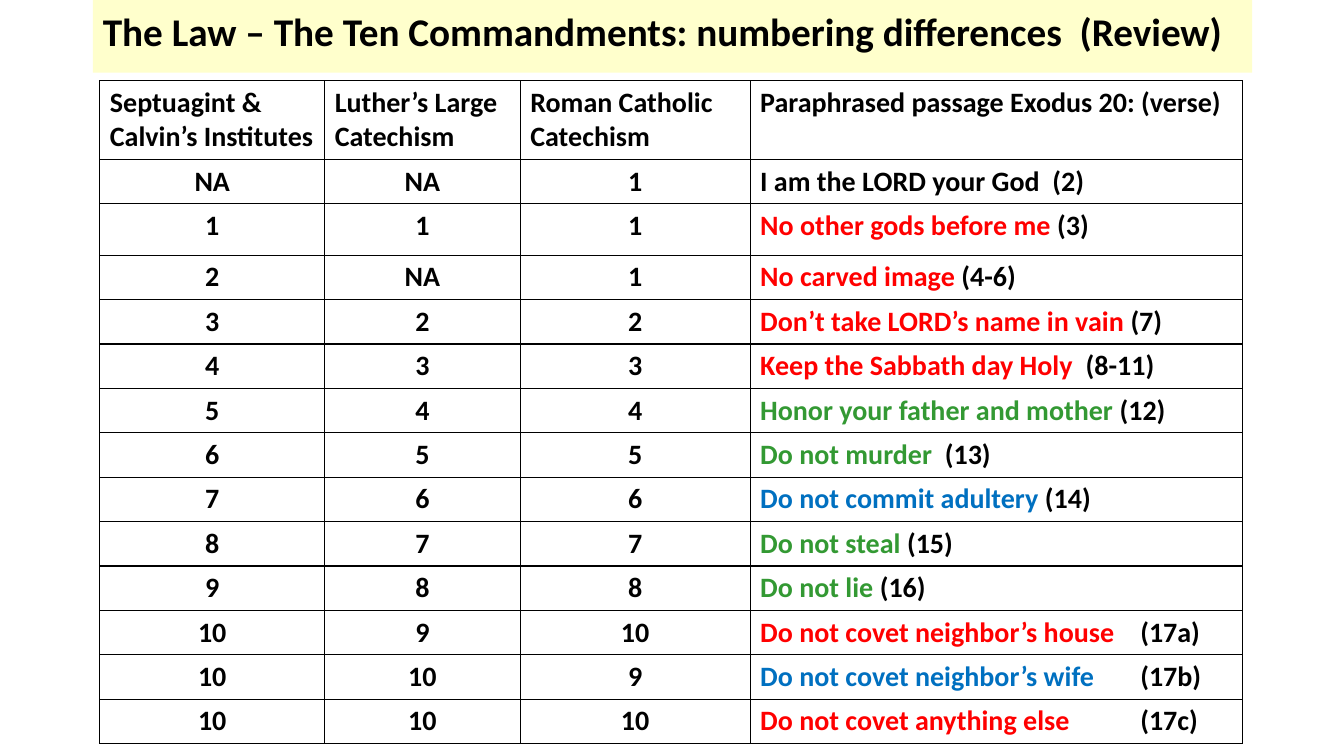
from dataclasses import dataclass

from lxml import etree
from pptx import Presentation
from pptx.dml.color import RGBColor
from pptx.enum.text import MSO_ANCHOR, PP_ALIGN
from pptx.oxml.ns import qn
from pptx.util import Inches, Pt

LEFT, CENTER = PP_ALIGN.LEFT, PP_ALIGN.CENTER
MIDDLE = MSO_ANCHOR.MIDDLE
TITLE_ONLY = 5


@dataclass(frozen=True)
class Theme:
    font: str = "Calibri"
    title_size: int = 28
    table_size: int = 20
    black: str = "000000"
    red: str = "FF0000"
    green: str = "339933"
    blue: str = "0070C0"
    title_fill: str = "FFFFCC"
    border_pt: int = 1


@dataclass(frozen=True)
class Commandment:
    numbers: tuple[str, str, str]
    passage: str
    verse: str
    color: str


THEME = Theme()
TITLE = "The Law – The Ten Commandments: numbering differences  (Review)"
HEADERS = (
    "Septuagint & Calvin’s Institutes",
    "Luther’s Large Catechism",
    "Roman Catholic Catechism",
    "Paraphrased passage Exodus 20: (verse)",
)
COMMANDMENTS = (
    Commandment(("NA", "NA", "1"), "I am the LORD your God  ", "(2)", THEME.black),
    Commandment(("1", "1", "1"), "No other gods before me ", "(3)", THEME.red),
    Commandment(("2", "NA", "1"), "No carved image ", "(4-6)", THEME.red),
    Commandment(("3", "2", "2"), "Don’t take LORD’s name in vain ", "(7)", THEME.red),
    Commandment(("4", "3", "3"), "Keep the Sabbath day Holy  ", "(8-11)", THEME.red),
    Commandment(("5", "4", "4"), "Honor your father and mother ", "(12)", THEME.green),
    Commandment(("6", "5", "5"), "Do not murder  ", "(13)", THEME.green),
    Commandment(("7", "6", "6"), "Do not commit adultery ", "(14)", THEME.blue),
    Commandment(("8", "7", "7"), "Do not steal ", "(15)", THEME.green),
    Commandment(("9", "8", "8"), "Do not lie ", "(16)", THEME.green),
    Commandment(("10", "9", "10"), "Do not covet neighbor’s house\t", "(17a)", THEME.red),
    Commandment(("10", "10", "9"), "Do not covet neighbor’s wife\t", "(17b)", THEME.blue),
    Commandment(("10", "10", "10"), "Do not covet anything else\t", "(17c)", THEME.red),
)
COLUMN_WIDTHS = (2.23, 1.94, 2.28, 4.88)
HEADER_HEIGHT, ROW_HEIGHT, TALL_ROW_HEIGHT = 0.77, 0.43, 0.51
TALL_ROW = 2
VERSE_TAB = 3.77


def add_run(p, text: str, size: int, color: str = THEME.black) -> None:
    r = p.add_run()
    r.text = text
    r.font.name = THEME.font
    r.font.size = Pt(size)
    r.font.bold = True
    r.font.color.rgb = RGBColor.from_string(color)


def add_tab_stop(p, position: float) -> None:
    tabs = etree.SubElement(p._p.get_or_add_pPr(), qn("a:tabLst"))
    etree.SubElement(tabs, qn("a:tab"), pos=str(Inches(position)), algn="l")


def format_cell(cell) -> None:
    tc_pr = cell._tc.get_or_add_tcPr()
    for side in ("lnL", "lnR", "lnT", "lnB"):
        ln = etree.SubElement(tc_pr, qn(f"a:{side}"), w=str(Pt(THEME.border_pt)))
        fill = etree.SubElement(ln, qn("a:solidFill"))
        etree.SubElement(fill, qn("a:srgbClr"), val=THEME.black)
    cell.fill.background()


def fill_cell(cell, runs: list[tuple[str, str]], align=LEFT) -> None:
    format_cell(cell)
    p = cell.text_frame.paragraphs[0]
    p.alignment = align
    if any("\t" in text for text, _ in runs):
        add_tab_stop(p, VERSE_TAB)
    for text, color in runs:
        add_run(p, text, THEME.table_size, color)


def add_title(slide) -> None:
    sp = slide.shapes.title
    sp.left, sp.top = Inches(0.92), Inches(0)
    sp.width, sp.height = Inches(11.5), Inches(0.72)
    sp.fill.solid()
    sp.fill.fore_color.rgb = RGBColor.from_string(THEME.title_fill)
    tf = sp.text_frame
    tf.word_wrap = True
    tf.vertical_anchor = MIDDLE
    tf.margin_bottom = Inches(0.1)
    p = tf.paragraphs[0]
    p.alignment = LEFT
    p.line_spacing = 0.9
    add_run(p, TITLE, THEME.title_size)


def add_commandment_table(slide) -> None:
    frame = slide.shapes.add_table(
        len(COMMANDMENTS) + 1, len(HEADERS),
        Inches(0.99), Inches(0.8), Inches(sum(COLUMN_WIDTHS)), Inches(6.48),
    )
    table = frame.table
    table.first_row = table.horz_banding = False
    for column, width in zip(table.columns, COLUMN_WIDTHS):
        column.width = Inches(width)
    for row in table.rows:
        row.height = Inches(ROW_HEIGHT)
    table.rows[0].height = Inches(HEADER_HEIGHT)
    table.rows[TALL_ROW].height = Inches(TALL_ROW_HEIGHT)

    # Header row
    for col, header in enumerate(HEADERS):
        fill_cell(table.cell(0, col), [(header, THEME.black)])

    # One row per commandment
    for row, item in enumerate(COMMANDMENTS, start=1):
        for col, number in enumerate(item.numbers):
            fill_cell(table.cell(row, col), [(number, THEME.black)], CENTER)
        fill_cell(
            table.cell(row, len(item.numbers)),
            [(item.passage, item.color), (item.verse, THEME.black)],
        )


def main() -> None:
    prs = Presentation()
    prs.slide_width, prs.slide_height = Inches(13.33), Inches(7.5)
    s = prs.slides.add_slide(prs.slide_layouts[TITLE_ONLY])
    add_title(s)
    add_commandment_table(s)
    prs.save("out.pptx")


if __name__ == "__main__":
    main()
